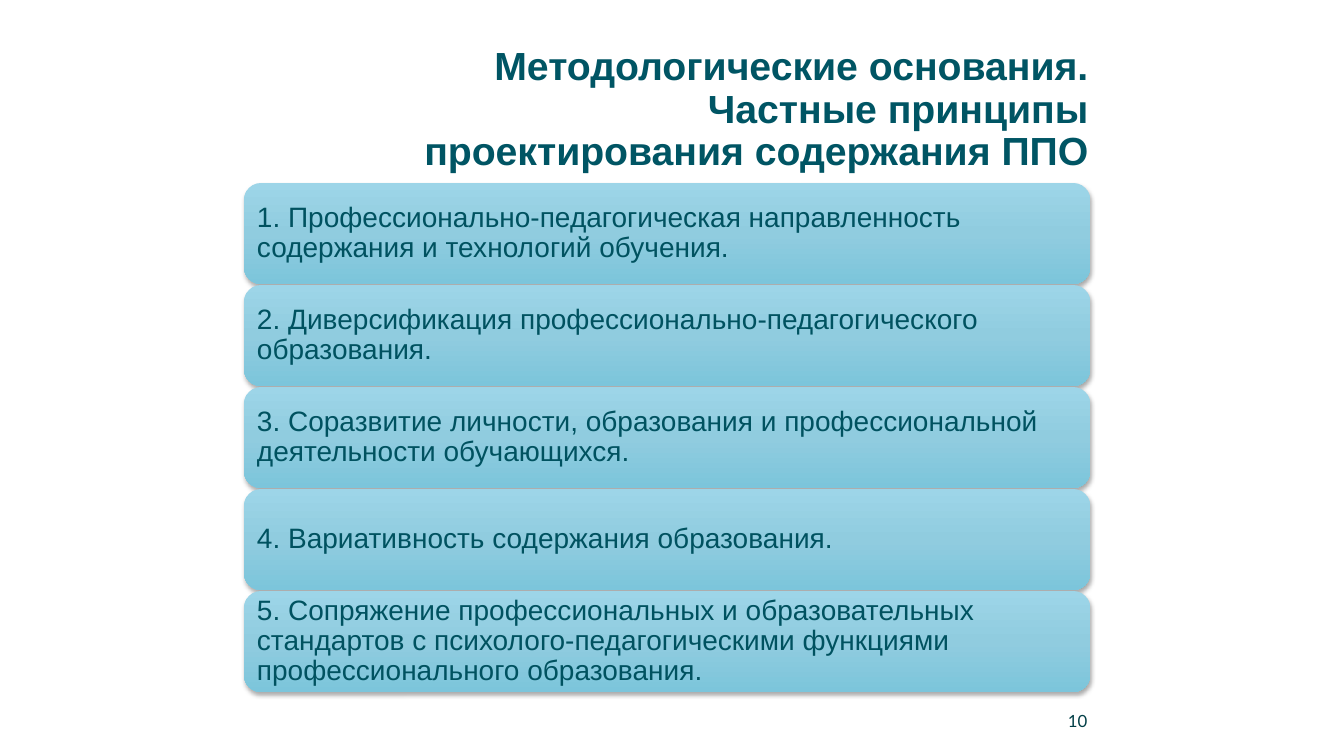
from copy import deepcopy

from lxml import etree
from pptx import Presentation
from pptx.dml.color import RGBColor
from pptx.enum.shapes import MSO_SHAPE
from pptx.enum.text import MSO_ANCHOR, PP_ALIGN
from pptx.oxml.ns import qn
from pptx.util import Emu, Inches, Pt

LEFT, RIGHT = PP_ALIGN.LEFT, PP_ALIGN.RIGHT
TOP, MIDDLE = MSO_ANCHOR.TOP, MSO_ANCHOR.MIDDLE
ROUNDED = MSO_SHAPE.ROUNDED_RECTANGLE

TITLE_LINES = [
    "Методологические основания.",
    "Частные принципы проектирования содержания ППО",
]
PRINCIPLES = [
    "1. Профессионально-педагогическая направленность содержания и технологий обучения.",
    "2. Диверсификация профессионально-педагогического образования.",
    "3. Соразвитие личности, образования и профессиональной деятельности обучающихся.",
    "4. Вариативность содержания образования.",
    "5. Сопряжение профессиональных и образовательных стандартов "
    "с психолого-педагогическими функциями профессионального образования.",
]
PAGE_NUMBER = "10"

TITLE_COLOR = RGBColor(0x00, 0x55, 0x64)
PRINCIPLE_COLOR = RGBColor(0x00, 0x52, 0x60)
NUMBER_COLOR = RGBColor(0x02, 0x3F, 0x47)
BAR_GRADIENT = [
    (0, RGBColor(0x9D, 0xD5, 0xE8)),
    (0.5, RGBColor(0x90, 0xCC, 0xDF)),
    (1, RGBColor(0x7C, 0xC5, 0xDB)),
]

PX_PER_INCH = 100.8
TITLE_BOX = (382, 42, 716, 170)
NUMBER_BOX = (1040, 701, 57, 40)
BAR_LEFT, BAR_TOP, BAR_WIDTH, BAR_HEIGHT = 244, 183, 846, 101
BAR_PITCH = 102
BAR_INSET = 8


def px(length):
    return Emu(round(length * 914400 / PX_PER_INCH))


def write(shape, lines, font_name, size, color, align, anchor, bold=False, spacing=1.0):
    """Fill the shape with one paragraph, with a line break between lines."""
    frame = shape.text_frame
    frame.word_wrap = True
    frame.vertical_anchor = anchor
    paragraph = frame.paragraphs[0]
    paragraph.alignment = align
    paragraph.line_spacing = spacing
    for index, line in enumerate(lines):
        if index:
            paragraph.add_line_break()
        run = paragraph.add_run()
        run.text = line
        run.font.name = font_name
        run.font.size = Pt(size)
        run.font.bold = bold
        run.font.color.rgb = color


def fill_gradient(shape):
    shape.fill.gradient()
    shape.fill.gradient_angle = 270
    stop_list = shape._element.spPr.find(".//" + qn("a:gsLst"))
    stop_list.append(deepcopy(stop_list[0]))
    for stop, (position, color) in zip(shape.fill.gradient_stops, BAR_GRADIENT):
        stop.position = position
        stop.color.rgb = color


def add_soft_shadow(shape):
    shape.shadow.inherit = False
    effects = shape._element.spPr.find(qn("a:effectLst"))
    shadow = etree.SubElement(
        effects, qn("a:outerShdw"), blurRad=str(Pt(3.5)), dist=str(Pt(2.2)),
        dir="5400000", rotWithShape="0")
    color = etree.SubElement(shadow, qn("a:srgbClr"), val="000000")
    etree.SubElement(color, qn("a:alpha"), val="32000")


def add_principle(slide, index, text):
    bar = slide.shapes.add_shape(
        ROUNDED, px(BAR_LEFT), px(BAR_TOP + index * BAR_PITCH), px(BAR_WIDTH), px(BAR_HEIGHT))
    fill_gradient(bar)
    bar.line.fill.background()
    add_soft_shadow(bar)
    frame = bar.text_frame
    frame.margin_left = frame.margin_right = px(BAR_INSET)
    frame.margin_top = frame.margin_bottom = px(BAR_INSET)
    write(bar, [text], "Arial", 20, PRINCIPLE_COLOR, LEFT, MIDDLE, spacing=0.9)


def main():
    presentation = Presentation()
    presentation.slide_width = Inches(13.33)
    presentation.slide_height = Inches(7.5)
    slide = presentation.slides.add_slide(presentation.slide_layouts[6])

    number = slide.shapes.add_textbox(*map(px, NUMBER_BOX))
    write(number, [PAGE_NUMBER], "Lato", 12, NUMBER_COLOR, RIGHT, MIDDLE)
    title = slide.shapes.add_textbox(*map(px, TITLE_BOX))
    write(title, TITLE_LINES, "Arial", 28, TITLE_COLOR, RIGHT, TOP, bold=True, spacing=0.9)
    for index, text in enumerate(PRINCIPLES):
        add_principle(slide, index, text)

    presentation.save("out.pptx")


if __name__ == "__main__":
    main()
